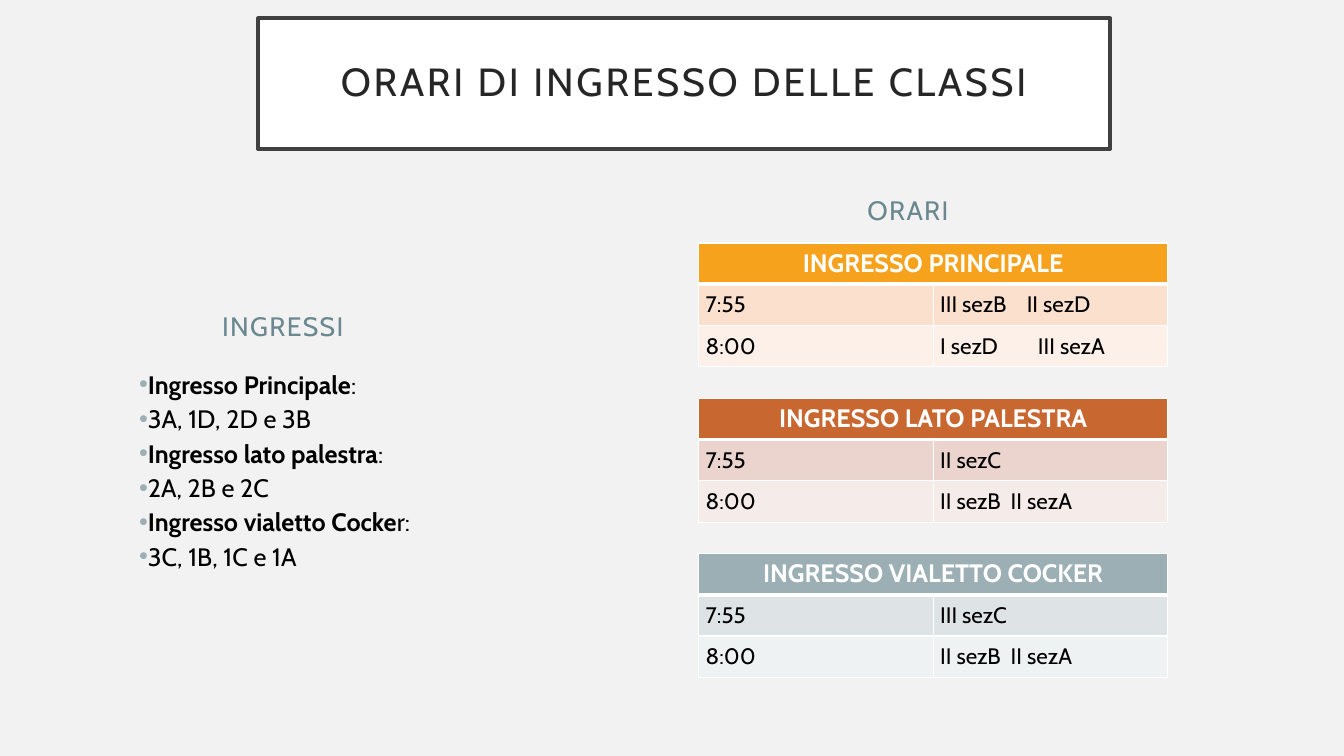
from lxml.etree import SubElement
from pptx import Presentation
from pptx.dml.color import RGBColor
from pptx.enum.text import MSO_ANCHOR as Anchor, MSO_AUTO_SIZE as AutoSize, PP_ALIGN as Align
from pptx.oxml.ns import qn
from pptx.util import Inches, Pt

# Content
TITLE = "ORARI DI INGRESSO DELLE CLASSI"
ENTRANCES = [
    [("Ingresso Principale", True), (":", False)],
    [("3A, 1D, 2D e 3B", False)],
    [("Ingresso lato palestra", True), (":", False)],
    [("2A, 2B e 2C", False)],
    [("Ingresso vialetto Cocke", True), ("r:", False)],
    [("3C, 1B, 1C e 1A", False)],
]
# Heading, fills of the three rows, then (time, classes, tab stop in inches)
TIMETABLES = [
    ("INGRESSO PRINCIPALE", ("F6A21D", "FBE0CD", "FDF0E8"),
     [("7:55", "III sezB\tII sezD", 0.86), ("8:00", "I sezD\tIII sezA", 0.97)]),
    ("INGRESSO LATO PALESTRA", ("C96731", "EBD3CE", "F5EBE8"),
     [("7:55", "II sezC", None), ("8:00", "II sezB\tII sezA", 0.7)]),
    ("INGRESSO VIALETTO COCKER", ("9BAFB5", "DEE3E5", "EFF2F3"),
     [("7:55", "III sezC", None), ("8:00", "II sezB\tII sezA", 0.7)]),
]
FONT = "Cabin"
HEADING = dict(size=19, color="6B8891", align=Align.CENTER, before=10, tracking=1)
TABLE_LEFT, TABLE_TOP, TABLE_STEP = 6.93, 2.41, 1.54
TABLE_WIDTH, ROW_HEIGHT = 4.65, 0.41


def rgb(value):
    return RGBColor.from_string(value)


def write(frame, paragraphs, size=18, color="000000", align=Align.LEFT, before=0,
          line=1.0, tracking=0, bullet=None, tab=None):
    """Fill a text frame; each paragraph is a list of (text, bold) runs."""
    frame.word_wrap = True
    for index, runs in enumerate(paragraphs):
        paragraph = frame.add_paragraph() if index else frame.paragraphs[0]
        paragraph.alignment = align
        paragraph.line_spacing = line
        paragraph.space_before, paragraph.space_after = Pt(before), Pt(0)
        properties = paragraph._p.get_or_add_pPr()
        if bullet:
            properties.set("marL", str(Inches(0.25)))
            properties.set("indent", str(Inches(0.31)))
            bullet_color = SubElement(properties, qn("a:buClr"))
            SubElement(bullet_color, qn("a:srgbClr"), val=bullet)
            SubElement(properties, qn("a:buFont"), typeface="Arial")
            SubElement(properties, qn("a:buChar"), char="•")
        if tab:
            stops = SubElement(properties, qn("a:tabLst"))
            SubElement(stops, qn("a:tab"), pos=str(Inches(tab)), algn="l")
        for text, bold in runs:
            run = paragraph.add_run()
            run.text = text
            run.font.name, run.font.size, run.font.bold = FONT, Pt(size), bold
            run.font.color.rgb = rgb(color)
            if tracking:
                run._r.get_or_add_rPr().set("spc", str(tracking * 100))


def place(shape, left, top, width, height, anchor):
    shape.left, shape.top = Inches(left), Inches(top)
    shape.width, shape.height = Inches(width), Inches(height)
    shape.text_frame.auto_size = AutoSize.NONE
    shape.text_frame.vertical_anchor = anchor
    return shape.text_frame


def style_cell(cell, fill, top=1, bottom=1):
    """White borders, widths in points, and a solid fill."""
    properties = cell._tc.get_or_add_tcPr()
    for side, width in (("L", 1), ("R", 1), ("T", top), ("B", bottom)):
        border = SubElement(properties, qn(f"a:ln{side}"), w=str(Pt(width)))
        SubElement(SubElement(border, qn("a:solidFill")), qn("a:srgbClr"), val="FFFFFF")
    cell.fill.solid()
    cell.fill.fore_color.rgb = rgb(fill)


def add_timetable(slide, top, heading, fills, rows):
    table = slide.shapes.add_table(
        len(rows) + 1, 2, Inches(TABLE_LEFT), Inches(top),
        Inches(TABLE_WIDTH), Inches(ROW_HEIGHT * (len(rows) + 1))).table
    table.horz_banding = False
    for row_index, fill in enumerate(fills):
        for cell in table.rows[row_index].cells:
            style_cell(cell, fill, top=3 if row_index == 1 else 1,
                       bottom=3 if row_index == 0 else 1)
    header = table.cell(0, 0)
    header.merge(table.cell(0, 1))
    write(header.text_frame, [[(heading, True)]], color="FFFFFF", align=Align.CENTER)
    for row_index, (time, classes, tab) in enumerate(rows, start=1):
        for column, (text, stop) in enumerate(((time, None), (classes, tab))):
            cell = table.cell(row_index, column)
            cell.margin_left = cell.margin_right = Inches(0.07)
            cell.margin_top = cell.margin_bottom = Inches(0.07)
            write(cell.text_frame, [[(text, False)]], size=16, tab=stop)


def main():
    presentation = Presentation()
    presentation.slide_width, presentation.slide_height = Inches(13.33), Inches(7.5)
    slide = presentation.slides.add_slide(presentation.slide_layouts.get_by_name("Comparison"))
    slide.background.fill.solid()
    slide.background.fill.fore_color.rgb = rgb("F2F2F2")
    title, left_heading, entrance_list, right_heading, spare = slide.placeholders
    spare._element.getparent().remove(spare._element)

    # Framed title
    title.fill.solid()
    title.fill.fore_color.rgb = rgb("FFFFFF")
    title.line.color.rgb = rgb("404040")
    title.line.width = Pt(2.5)
    frame = place(title, 2.56, 0.18, 8.45, 1.3, Anchor.MIDDLE)
    frame.margin_left = frame.margin_right = Inches(0.2)
    frame.margin_top = frame.margin_bottom = Inches(0.2)
    write(frame, [[(TITLE, False)]], size=28, color="262626", align=Align.CENTER,
          line=0.9, tracking=2)

    # Column headings and list of entrances
    write(place(left_heading, 0.47, 2.67, 4.67, 0.77, Anchor.BOTTOM),
          [[("INGRESSI", False)]], **HEADING)
    write(place(right_heading, 6.67, 1.52, 4.67, 0.77, Anchor.BOTTOM),
          [[("ORARI", False)]], **HEADING)
    write(place(entrance_list, 0.72, 3.61, 4.67, 3.11, Anchor.TOP),
          ENTRANCES, align=Align.JUSTIFY, before=3, bullet="9BAFB5")

    # Timetables, evenly stacked
    for index, timetable in enumerate(TIMETABLES):
        add_timetable(slide, TABLE_TOP + index * TABLE_STEP, *timetable)

    presentation.save("out.pptx")


if __name__ == "__main__":
    main()
